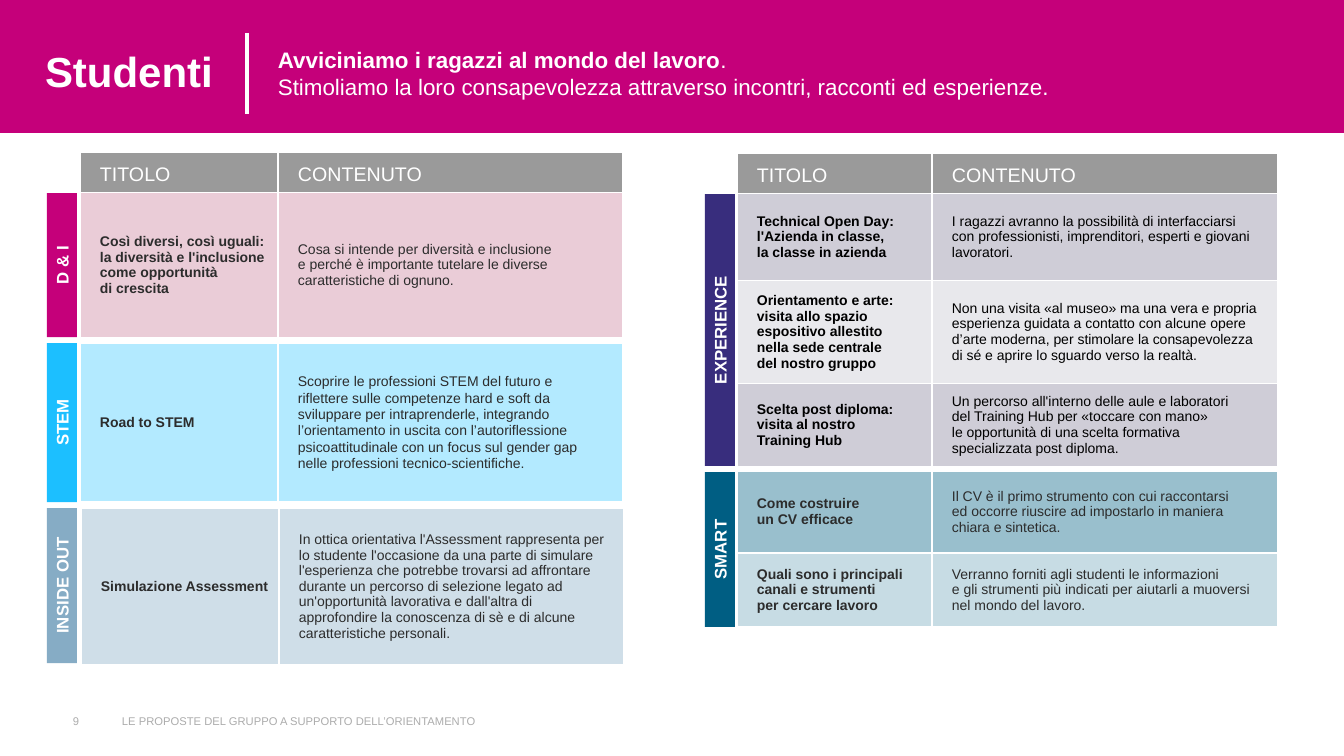
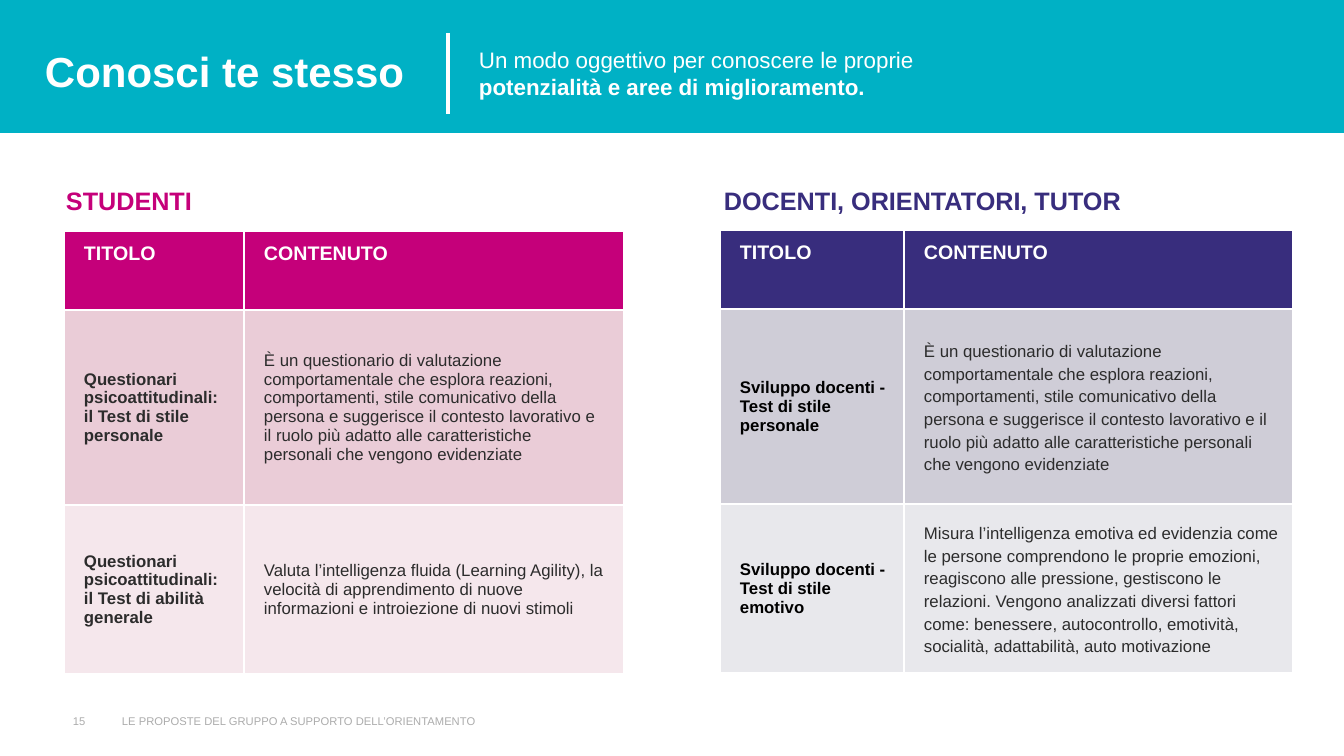
"""Build two slides of orientation proposals for students and teachers."""
import dataclasses
import lxml.etree
import pptx
import pptx.dml.color
import pptx.enum.shapes
import pptx.enum.text
import pptx.oxml.ns
import pptx.util


@dataclasses.dataclass(frozen=True)
class Theme:
    font: str = "Arial"
    white: str = "FFFFFF"
    black: str = "000000"
    ink: str = "2C2C2C"
    muted: str = "ACACAC"
    grey: str = "9A9A9A"
    magenta: str = "C5007A"
    rose: str = "EACCD7"
    pale_rose: str = "F5E7EC"
    teal: str = "00B1C5"
    sky: str = "1CBFFF"
    pale_sky: str = "B3EAFF"
    steel: str = "86ACC5"
    pale_steel: str = "CFDEE8"
    violet: str = "382D7D"
    lilac: str = "CFCDD7"
    pale_lilac: str = "E8E8EC"
    petrol: str = "005E83"
    mid_petrol: str = "99BFCD"
    pale_petrol: str = "C7DCE4"
    title: int = 30
    heading: int = 18
    subtitle: int = 16
    header: int = 14
    tag: int = 12
    body: int = 12
    small: int = 10
    footer: int = 8


T = Theme()
RGB = pptx.dml.color.RGBColor.from_string
MIDDLE = pptx.enum.text.MSO_ANCHOR.MIDDLE
TOP = pptx.enum.text.MSO_ANCHOR.TOP
CENTER = pptx.enum.text.PP_ALIGN.CENTER
RECT = pptx.enum.shapes.MSO_SHAPE.RECTANGLE
EMU_PER_PX = 914400 / 100.8


def px(*lengths):
    """Turn px lengths into EMU."""
    return [round(n * EMU_PER_PX) for n in lengths]


def write(tf, text, *, size, color, bold=False, align=None, spacing=None, after=None):
    """Append formatted text to the first paragraph of a frame."""
    p = tf.paragraphs[0]
    if align is not None:
        p.alignment = align
    if spacing:
        p.line_spacing = spacing
    if after:
        p.space_after = pptx.util.Pt(after)
    for i, line in enumerate(text.split("\n")):
        if i:
            p.add_line_break()
        r = p.add_run()
        r.text = line
        r.font.name, r.font.size, r.font.bold = T.font, pptx.util.Pt(size), bold
        r.font.color.rgb = RGB(color)


FOOTER = "LE PROPOSTE DEL GRUPPO A SUPPORTO DELL’ORIENTAMENTO"
HEADER = ("TITOLO", "CONTENUTO")
LEFT = dict(cols=(198, 345), right=(0, 20), size=T.small, title_ink=T.ink, ink=T.ink)
RIGHT = dict(LEFT, cols=(195, 346), right=(20, 20))
LARGE = dict(LEFT, right=(20, 20), size=T.body, header_bold=True, rows=(79, 195, 169))

SLIDES = [
    dict(
        number="9", band=T.magenta, title="Studenti", title_width=592, divider=247,
        subtitle=[("Avviciniamo i ragazzi al mondo del lavoro", True),
                  (".\nStimoliamo la loro consapevolezza attraverso incontri, "
                   "racconti ed esperienze.", False)],
        subtitle_box=(268, 871), headings=[],
        tags=[
            ("D & I", T.magenta, 47, 193, 144),
            ("STEM", T.sky, 47, 343, 159),
            ("INSIDE OUT", T.steel, 47, 508, 155),
            ("EXPERIENCE", T.violet, 705, 194, 272),
            ("SMART", T.petrol, 705, 472, 155),
        ],
        tables=[
            dict(LEFT, at=(80, 152), rows=(40, 145), header=T.grey, body=[
                ("Così diversi, così uguali: la diversità e l'inclusione "
                 "come opportunità\ndi crescita",
                 "Cosa si intende per diversità e inclusione\ne perché è importante "
                 "tutelare le diverse caratteristiche di ognuno.", T.rose)]),
            dict(LEFT, at=(80, 343), rows=(159,), spacing=1.05, body=[
                ("Road to STEM",
                 "Scoprire le professioni STEM del futuro e riflettere sulle competenze "
                 "hard e soft da sviluppare per intraprenderle, integrando l’orientamento "
                 "in uscita con l’autoriflessione psicoattitudinale con un focus sul "
                 "gender gap nelle professioni tecnico-scientifiche.", T.pale_sky)]),
            dict(LEFT, at=(81, 508), rows=(157,), body=[
                ("Simulazione Assessment",
                 "In ottica orientativa l'Assessment rappresenta per lo studente "
                 "l'occasione da una parte di simulare l'esperienza che potrebbe trovarsi "
                 "ad affrontare durante un percorso di selezione legato ad un'opportunità "
                 "lavorativa e dall'altra di approfondire la conoscenza di sè e di alcune "
                 "caratteristiche personali.", T.pale_steel)]),
            dict(RIGHT, at=(737, 153), rows=(40, 87, 103, 83), header=T.grey,
                 title_ink=T.black, ink=T.black, body=[
                ("Technical Open Day: l'Azienda in classe,\nla classe in azienda",
                 "I ragazzi avranno la possibilità di interfacciarsi con professionisti, "
                 "imprenditori, esperti e giovani lavoratori.", T.lilac),
                ("Orientamento e arte: visita allo spazio espositivo allestito\n"
                 "nella sede centrale\ndel nostro gruppo",
                 "Non una visita «al museo» ma una vera e propria esperienza guidata a "
                 "contatto con alcune opere d’arte moderna, per stimolare la consapevolezza "
                 "di sé e aprire lo sguardo verso la realtà.", T.pale_lilac),
                ("Scelta post diploma: visita al nostro Training Hub",
                 "Un percorso all'interno delle aule e laboratori\ndel Training Hub per "
                 "«toccare con mano»\nle opportunità di una scelta formativa "
                 "specializzata post diploma.", T.lilac)]),
            dict(RIGHT, at=(737, 471), rows=(82, 74), body=[
                ("Come costruire\nun CV efficace",
                 "Il CV è il primo strumento con cui raccontarsi\ned occorre riuscire ad "
                 "impostarlo in maniera chiara e sintetica.", T.mid_petrol),
                ("Quali sono i principali canali e strumenti\nper cercare lavoro",
                 "Verranno forniti agli studenti le informazioni\ne gli strumenti più "
                 "indicati per aiutarli a muoversi nel mondo del lavoro.", T.pale_petrol)]),
        ],
    ),
    dict(
        number="15", band=T.teal, title="Conosci te stesso", title_width=789, divider=448,
        subtitle=[("Un modo oggettivo per conoscere le proprie\n", False),
                  ("potenzialità e aree di miglioramento.", True)],
        subtitle_box=(469, 579), tags=[],
        headings=[("STUDENTI", T.magenta, 46, 256),
                  ("DOCENTI, ORIENTATORI, TUTOR", T.violet, 704, 444)],
        tables=[
            dict(LARGE, at=(64, 231), cols=(180, 380), header=T.magenta, body=[
                ("Questionari psicoattitudinali: il Test di stile personale",
                 "È un questionario di valutazione comportamentale che esplora reazioni, "
                 "comportamenti, stile comunicativo della persona e suggerisce il contesto "
                 "lavorativo e il ruolo più adatto alle caratteristiche personali che "
                 "vengono evidenziate", T.rose),
                ("Questionari psicoattitudinali: il Test di abilità generale",
                 "Valuta l’intelligenza fluida (Learning Agility), la velocità di "
                 "apprendimento di nuove informazioni e introiezione di nuovi stimoli",
                 T.pale_rose)]),
            dict(LARGE, at=(720, 230), cols=(184, 389), header=T.violet, right=(12, 12),
                 title_ink=T.black, spacing=1.2, after=8, body=[
                ("Sviluppo docenti - Test di stile\npersonale",
                 "È un questionario di valutazione comportamentale che esplora reazioni, "
                 "comportamenti, stile comunicativo della persona e suggerisce il contesto "
                 "lavorativo e il ruolo più adatto alle caratteristiche personali che "
                 "vengono evidenziate", T.lilac),
                ("Sviluppo docenti - Test di stile emotivo",
                 "Misura l’intelligenza emotiva ed evidenzia come le persone comprendono le "
                 "proprie emozioni, reagiscono alle pressione, gestiscono le relazioni. "
                 "Vengono analizzati diversi fattori come: benessere, autocontrollo, "
                 "emotività, socialità, adattabilità, auto motivazione", T.pale_lilac)]),
        ],
    ),
]

prs = pptx.Presentation()
prs.slide_width, prs.slide_height = px(1344, 756)

for page in SLIDES:
    s = prs.slides.add_slide(prs.slide_layouts[6])

    blocks = [(RECT, page["band"], "", px(0, 0, 1344, 133), 0)]
    for label, color, x, y, length in page["tags"]:
        box = px(x + 15 - length / 2, y + length / 2 - 15, length, 30)
        blocks.append((RECT, color, label, box, 270))
    for kind, color, label, box, angle in blocks:
        sp = s.shapes.add_shape(kind, *box)
        sp.shadow.inherit = False
        sp.rotation = angle
        sp.fill.solid()
        sp.fill.fore_color.rgb = RGB(color)
        sp.line.fill.background()
        if label:
            tf = sp.text_frame
            tf.vertical_anchor = MIDDLE
            tf.margin_left, tf.margin_top, tf.margin_right, tf.margin_bottom = px(2, 2, 2, 2)
            write(tf, label, size=T.tag, color=T.white, bold=True, align=CENTER)

    sub_x, sub_width = page["subtitle_box"]
    texts = [
        ((63, 701, 47, 40), MIDDLE, (10, 5), T.footer, T.muted, [(page["number"], False)]),
        ((112, 701, 454, 40), MIDDLE, (10, 5), T.footer, T.muted, [(FOOTER, False)]),
        ((35, 33, page["title_width"], 75), MIDDLE, (10, 5), T.title, T.white,
         [(page["title"], True)]),
        ((sub_x, 41, sub_width, 65), TOP, (10, 5), T.subtitle, T.white, page["subtitle"]),
    ]
    for text, color, x, width in page["headings"]:
        texts.append(((x, 183, width, 40), TOP, (20, 2), T.heading, color, [(text, True)]))
    for box, anchor, (side, edge), size, color, runs in texts:
        tf = s.shapes.add_textbox(*px(*box)).text_frame
        tf.word_wrap = True
        tf.vertical_anchor = anchor
        tf.margin_left, tf.margin_top, tf.margin_right, tf.margin_bottom = px(
            side, edge, side, edge)
        for text, bold in runs:
            write(tf, text, size=size, color=color, bold=bold)

    x = page["divider"]
    divider = s.shapes.add_connector(
        pptx.enum.shapes.MSO_CONNECTOR.STRAIGHT, *px(x, 33, x, 114))
    divider.line.color.rgb = RGB(T.white)
    divider.line.width = pptx.util.Pt(3.25)
    lxml.etree.SubElement(divider._element.spPr, pptx.oxml.ns.qn("a:effectLst"))

    for t in page["tables"]:
        header = t.get("header")
        rows = ([(*HEADER, header)] if header else []) + t["body"]
        box = px(*t["at"], sum(t["cols"]), sum(t["rows"]))
        tbl = s.shapes.add_table(len(rows), 2, *box).table
        tbl.first_row = tbl.horz_banding = False
        for col, width in zip(tbl.columns, px(*t["cols"])):
            col.width = width
        for row, height in zip(tbl.rows, px(*t["rows"])):
            row.height = height
        for i, (title, content, fill) in enumerate(rows):
            is_header = bool(header) and i == 0
            for j, text in enumerate((title, content)):
                cell = tbl.cell(i, j)
                cell.fill.solid()
                cell.fill.fore_color.rgb = RGB(fill)
                edges = [("a:lnL", j == 1), ("a:lnR", j == 0),
                         ("a:lnT", i > 0), ("a:lnB", i < len(rows) - 1)]
                inner = [tag for tag, shown in edges if shown]
                for k, tag in enumerate(inner):
                    ln = lxml.etree.Element(pptx.oxml.ns.qn(tag), w=str(pptx.util.Pt(1.5)))
                    solid = lxml.etree.SubElement(ln, pptx.oxml.ns.qn("a:solidFill"))
                    lxml.etree.SubElement(solid, pptx.oxml.ns.qn("a:srgbClr"), val=T.white)
                    cell._tc.get_or_add_tcPr().insert(k, ln)
                margins = (20, 12, 10, 5) if is_header else (20, 0, t["right"][j], 0)
                (cell.margin_left, cell.margin_top,
                 cell.margin_right, cell.margin_bottom) = px(*margins)
                cell.vertical_anchor = TOP if is_header else MIDDLE
                if is_header:
                    write(cell.text_frame, text, size=T.header, color=T.white,
                          bold=t.get("header_bold", False))
                elif j == 0:
                    write(cell.text_frame, text, size=t["size"], color=t["title_ink"], bold=True)
                else:
                    write(cell.text_frame, text, size=t["size"], color=t["ink"],
                          spacing=t.get("spacing"), after=t.get("after"))

prs.save("out.pptx")
